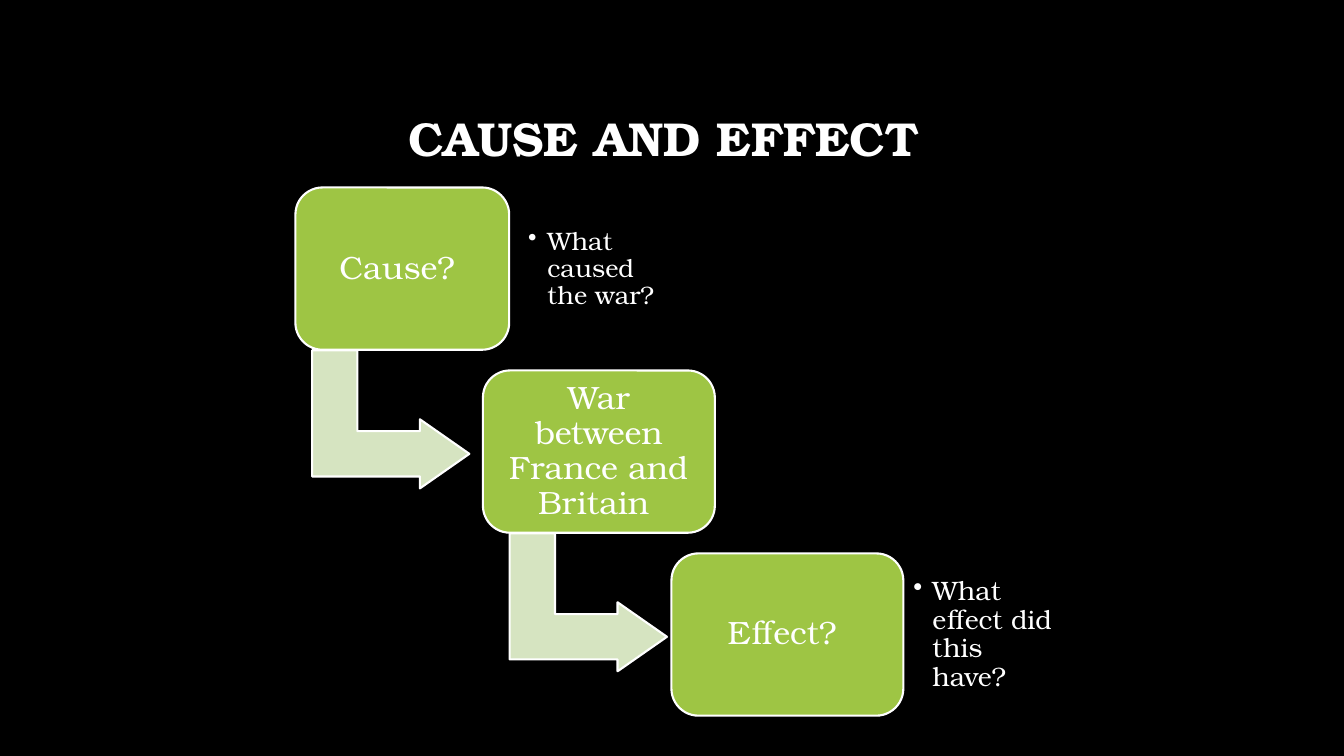
from lxml import etree
from pptx import Presentation
from pptx.dml.color import RGBColor
from pptx.enum.shapes import MSO_SHAPE
from pptx.enum.text import MSO_ANCHOR, PP_ALIGN
from pptx.oxml.ns import qn
from pptx.util import Inches, Pt

FONT = "TeX Gyre Bonum"
COLORS = {"background": "000000", "text": "FFFFFF", "outline": "FFFFFF",
          "step": "9EC544", "arrow": "D6E4C1"}
ROUNDED = MSO_SHAPE.ROUNDED_RECTANGLE
BENT_ARROW = MSO_SHAPE.BENT_UP_ARROW
MIDDLE = MSO_ANCHOR.MIDDLE
CENTER, LEFT = PP_ALIGN.CENTER, PP_ALIGN.LEFT

FIRST_TOP, ROW_STEP = 1.86, 1.815
STEP_HEIGHT = 1.61
ARROW_DROP = 1.52
NOTE_DROP = 0.16

# label, left, width
STEPS = [("Cause? ", 2.93, 2.12),
         ("War between France and Britain ", 4.79, 2.3),
         ("Effect? ", 6.66, 2.3)]
# row, left
ARROWS = [(0, 3.19), (1, 5.15)]
# row, question, left, text size
NOTES = [(0, "What caused the war?", 5.14, 18),
         (2, "What effect did this have?", 8.96, 19)]


def color(name):
    return RGBColor.from_string(COLORS[name])


def row_top(row):
    return FIRST_TOP + row * ROW_STEP


def write(frame, text, size, align, bold=False):
    frame.text = text
    frame.word_wrap = True
    frame.vertical_anchor = MIDDLE
    paragraph = frame.paragraphs[0]
    paragraph.alignment = align
    paragraph.line_spacing = 0.9
    font = paragraph.runs[0].font
    font.name, font.size, font.bold = FONT, Pt(size), bold
    font.color.rgb = color("text")
    return paragraph


def set_margins(frame, margin):
    frame.margin_left = frame.margin_right = Inches(margin)
    frame.margin_top = frame.margin_bottom = Inches(margin)


def add_outlined(slide, preset, fill, left, top, width, height):
    shape = slide.shapes.add_shape(preset, Inches(left), Inches(top),
                                   Inches(width), Inches(height))
    shape.shadow.inherit = False
    shape.fill.solid()
    shape.fill.fore_color.rgb = color(fill)
    shape.line.color.rgb = color("outline")
    shape.line.width = Pt(1.5)
    return shape


def add_arrow(slide, row, left):
    arrow = add_outlined(slide, BENT_ARROW, "arrow", left,
                         row_top(row) + ARROW_DROP, 1.37, 1.56)
    arrow.rotation = 90
    for index, value in enumerate((0.328, 0.25, 0.358)):
        arrow.adjustments[index] = value


def add_step(slide, row, label, left, width):
    step = add_outlined(slide, ROUNDED, "step", left, row_top(row),
                        width, STEP_HEIGHT)
    set_margins(step.text_frame, 0.1)
    write(step.text_frame, label, 23, CENTER)


def add_note(slide, row, question, left, size):
    note = slide.shapes.add_textbox(Inches(left), Inches(row_top(row) + NOTE_DROP),
                                    Inches(1.68), Inches(1.3))
    set_margins(note.text_frame, 0.1)
    paragraph = write(note.text_frame, question, size, LEFT)
    properties = paragraph._p.get_or_add_pPr()
    properties.set("marL", str(Inches(0.19)))
    properties.set("indent", str(-Inches(0.19)))
    etree.SubElement(properties, qn("a:buChar")).set("char", "•")


def add_title(slide, text):
    title = slide.shapes.title
    title.left, title.top = Inches(1), Inches(0.67)
    title.width, title.height = Inches(11.32), Inches(1.45)
    write(title.text_frame, text, 34, CENTER, bold=True)


def main():
    deck = Presentation()
    deck.slide_width, deck.slide_height = Inches(13.33), Inches(7.5)
    slide = deck.slides.add_slide(deck.slide_layouts.get_by_name("Title Only"))
    slide.background.fill.solid()
    slide.background.fill.fore_color.rgb = color("background")

    add_title(slide, "CAUSE AND EFFECT ")
    for row, left in ARROWS:
        add_arrow(slide, row, left)
    for row, (label, left, width) in enumerate(STEPS):
        add_step(slide, row, label, left, width)
    for row, question, left, size in NOTES:
        add_note(slide, row, question, left, size)
    deck.save("out.pptx")


if __name__ == "__main__":
    main()
